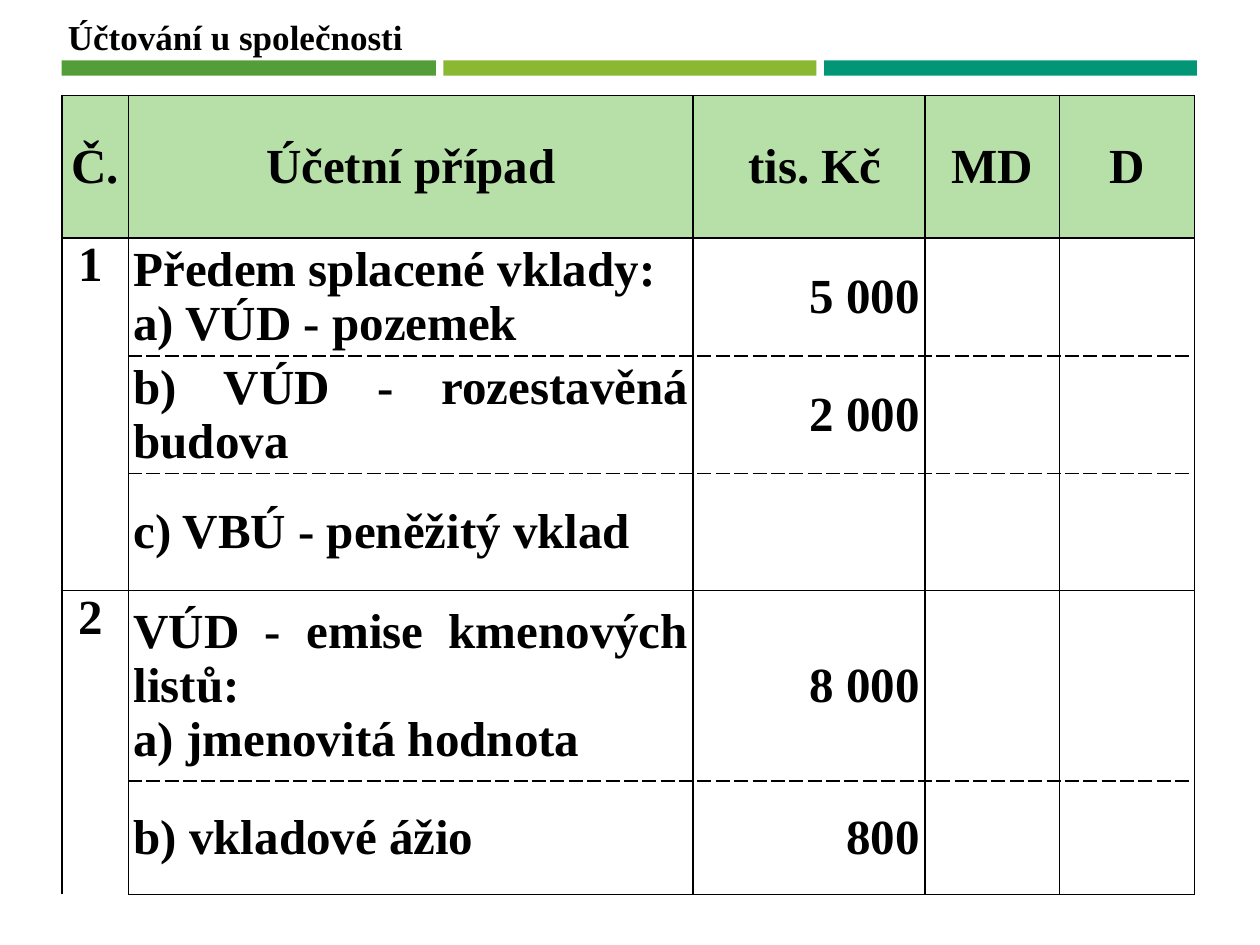
from dataclasses import dataclass
from typing import Any, NamedTuple

from lxml.etree import SubElement
from pptx import Presentation
from pptx.dml.color import RGBColor
from pptx.enum.shapes import MSO_SHAPE
from pptx.enum.text import MSO_ANCHOR, PP_ALIGN
from pptx.oxml.ns import qn
from pptx.util import Inches, Pt


@dataclass(frozen=True)
class Theme:
    """Colours, font and type sizes of the slide."""
    ink: str = "000000"
    head: str = "B7E0A8"
    face: str = "Times New Roman"
    title: int = 20
    body: int = 28
    line: int = 1


class Bar(NamedTuple):
    """A coloured bar: first grid column, width and fill."""
    left: float
    width: float
    fill: str


class Entry(NamedTuple):
    """One table row: height in grid rows and the cell texts."""
    high: float
    mark: str
    case: str
    sum: str
    debit: str = ""
    credit: str = ""


THEME = Theme()
COLS, ROWS = 100, 75
WIDE, HIGH = Inches(10), Inches(7.5)
BARS = (Bar(4.9, 29.7, "549E39"), Bar(35.2, 29.6, "8AB833"),
        Bar(65.4, 29.6, "029676"))
SPANS = (5.3, 44.8, 18.4, 10.7, 10.7)
ENTRIES = (
    Entry(11.3, "Č.", "Účetní případ", " tis. Kč", "MD", "D"),
    Entry(9.3, " 1", "Předem splacené vklady:\na) VÚD - pozemek", "5 000"),
    Entry(9.3, "", "b) VÚD - rozestavěná budova", "2 000"),
    Entry(9.3, "", "c) VBÚ - peněžitý vklad", ""),
    Entry(15.1, " 2", "VÚD - emise kmenových listů:\na) jmenovitá hodnota",
          "8 000"),
    Entry(9, "", "b) vkladové ážio", "800"),
)
GROUPS = ((1, 3), (4, 5))
ALIGNS = (PP_ALIGN.LEFT, PP_ALIGN.JUSTIFY, PP_ALIGN.RIGHT,
          PP_ALIGN.LEFT, PP_ALIGN.LEFT)


def across(cols: float) -> int:
    """Turn grid columns into a length."""
    return round(WIDE * cols / COLS)


def down(rows: float) -> int:
    """Turn grid rows into a length."""
    return round(HIGH * rows / ROWS)


def assign(obj: Any, **form: Any) -> None:
    """Set each format value on an object."""
    for key, value in form.items():
        setattr(obj, key, value)


def write(frame: Any, text: str, size: int, align: Any) -> None:
    """Write bold lines of text, one paragraph each."""
    frame.text = text
    for para in frame.paragraphs:
        para.alignment = align
        for run in para.runs:
            assign(run.font, name=THEME.face, size=Pt(size), bold=True)
            run.font.color.rgb = RGBColor.from_string(THEME.ink)


def border(cell: Any, sides: dict[str, str]) -> None:
    """Draw the given sides of a cell, each with its dash style."""
    props = cell._tc.get_or_add_tcPr()
    for side in "LRTB":
        if side not in sides:
            continue
        line = SubElement(props, qn(f"a:ln{side}"), w=str(Pt(THEME.line)))
        fill = SubElement(line, qn("a:solidFill"))
        SubElement(fill, qn("a:srgbClr"), val=THEME.ink)
        SubElement(line, qn("a:prstDash"), val=sides[side])


def edges(row: int, col: int) -> dict[str, str]:
    """Dash the lines inside a group, except down the merged column."""
    sides = dict.fromkeys("LRTB", "solid")
    for first, last in GROUPS:
        if first < row <= last:
            sides["T"] = "dash"
        if first <= row < last:
            sides["B"] = "dash"
    if col == 0:
        sides = {key: dash for key, dash in sides.items() if dash == "solid"}
    return sides


def draw_bar(slide: Any, bar: Bar) -> None:
    """Draw one bar under the title."""
    shape = slide.shapes.add_shape(
        MSO_SHAPE.RECTANGLE, across(bar.left), down(4.8),
        across(bar.width), down(1.2))
    shape.shadow.inherit = False
    shape.fill.solid()
    shape.fill.fore_color.rgb = RGBColor.from_string(bar.fill)
    shape.line.fill.background()


def draw_title(slide: Any) -> None:
    """Draw the slide title."""
    box = slide.shapes.add_textbox(
        across(4.4), down(0.7), across(28.8), down(4.4))
    box.text_frame.word_wrap = False
    write(box.text_frame, "Účtování u společnosti", THEME.title, PP_ALIGN.LEFT)


def draw_cell(cell: Any, text: str, row: int, col: int) -> None:
    """Format and fill one table cell."""
    top = col == 0 and row > 0
    assign(cell, margin_left=across(0.4), margin_right=across(0.4),
           margin_top=0, margin_bottom=0,
           vertical_anchor=MSO_ANCHOR.TOP if top else MSO_ANCHOR.MIDDLE)
    border(cell, edges(row, col))
    if row:
        cell.fill.background()
    else:
        cell.fill.solid()
        cell.fill.fore_color.rgb = RGBColor.from_string(THEME.head)
    if text:
        write(cell.text_frame, text, THEME.body,
              ALIGNS[col] if row else PP_ALIGN.CENTER)


def draw_table(slide: Any) -> None:
    """Draw the table of accounting entries."""
    table = slide.shapes.add_table(
        len(ENTRIES), len(SPANS), across(4.9), down(7.6), across(sum(SPANS)),
        down(sum(entry.high for entry in ENTRIES))).table
    assign(table, first_row=False, horz_banding=False)
    for col, span in zip(table.columns, SPANS):
        col.width = across(span)
    for row, entry in enumerate(ENTRIES):
        table.rows[row].height = down(entry.high)
        for col, text in enumerate(entry[1:]):
            draw_cell(table.cell(row, col), text, row, col)
    for first, last in GROUPS:
        table.cell(first, 0).merge(table.cell(last, 0))


def main() -> None:
    """Build and save the slide."""
    deck = Presentation()
    assign(deck, slide_width=WIDE, slide_height=HIGH)
    slide = deck.slides.add_slide(deck.slide_layouts[6])
    for bar in BARS:
        draw_bar(slide, bar)
    draw_title(slide)
    draw_table(slide)
    deck.save("out.pptx")


if __name__ == "__main__":
    main()
